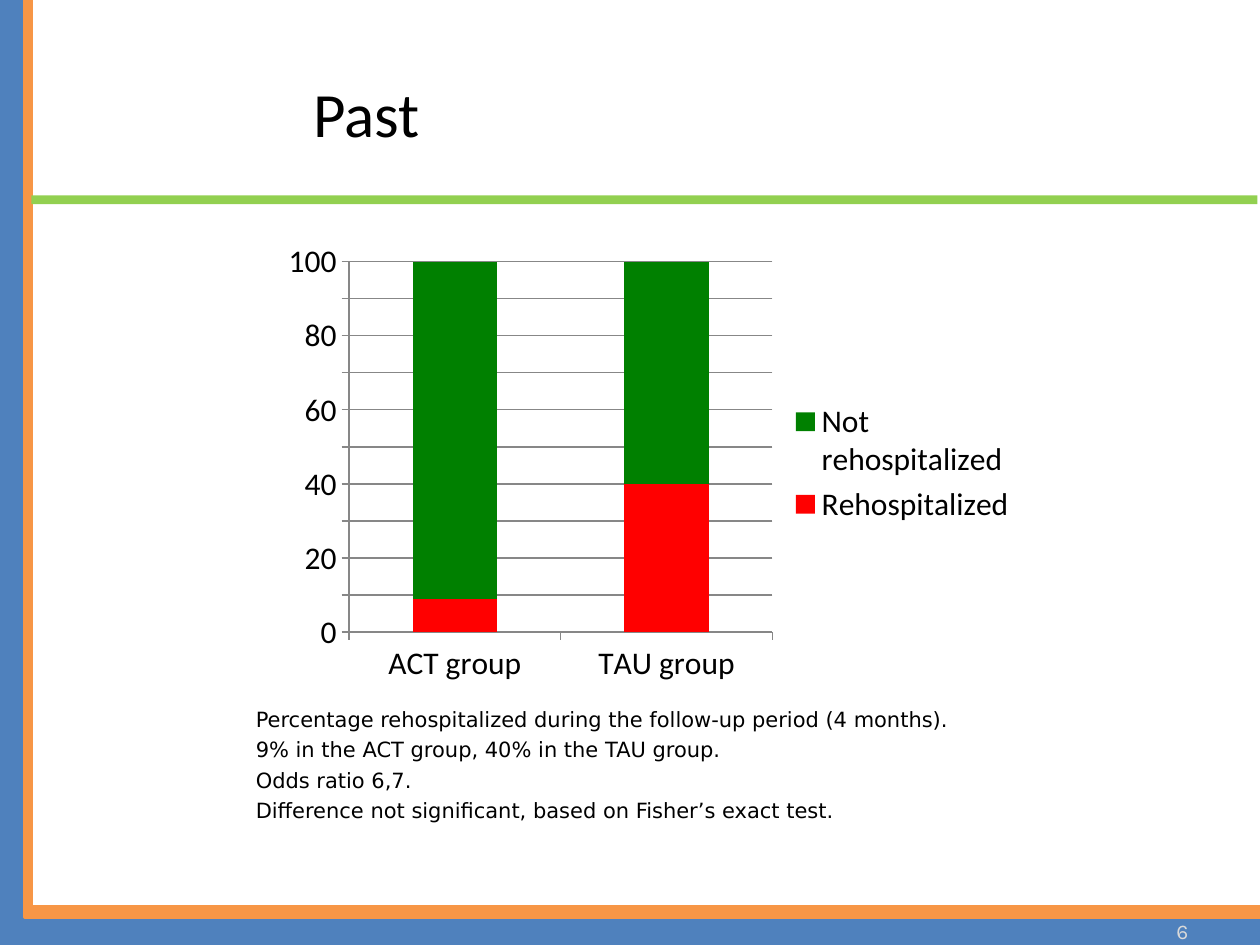
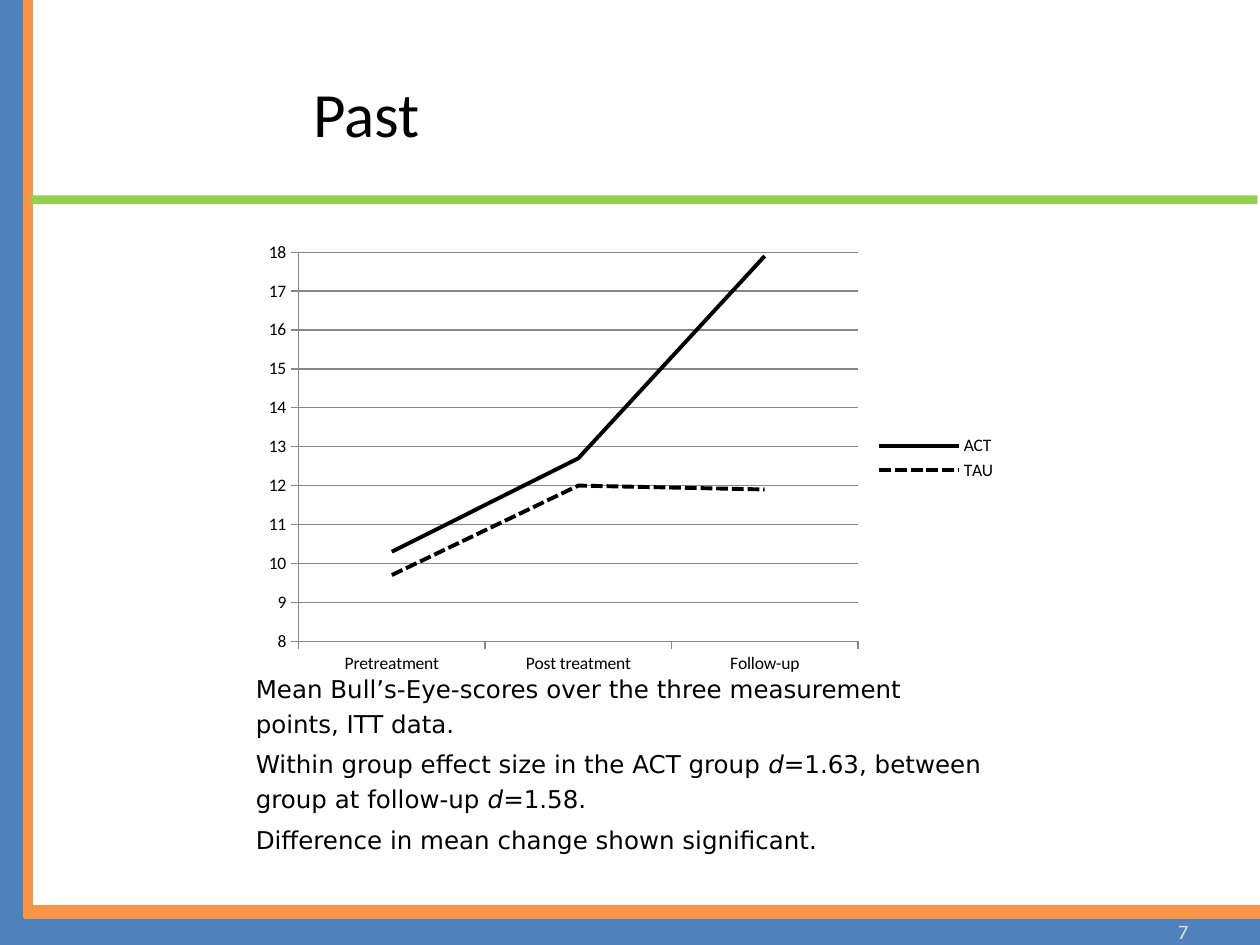
"""Build two slides that report trial results with a chart and a short comment each."""

from dataclasses import dataclass
from typing import Any, NamedTuple, Optional

from lxml import etree
from pptx import Presentation
from pptx.chart.chart import Chart
from pptx.chart.data import CategoryChartData
from pptx.dml.color import RGBColor
from pptx.enum.chart import XL_CHART_TYPE, XL_LEGEND_POSITION, XL_TICK_MARK
from pptx.enum.dml import MSO_LINE
from pptx.enum.shapes import MSO_SHAPE
from pptx.enum.text import MSO_ANCHOR, MSO_AUTO_SIZE, PP_ALIGN
from pptx.oxml.ns import qn
from pptx.slide import Slide
from pptx.util import Inches, Pt

RECT = MSO_SHAPE.RECTANGLE
STACKED, LINE = XL_CHART_TYPE.COLUMN_STACKED, XL_CHART_TYPE.LINE
LEGEND_RIGHT = XL_LEGEND_POSITION.RIGHT
TICK_OUT = XL_TICK_MARK.OUTSIDE
DASH = MSO_LINE.SQUARE_DOT
TOP, MIDDLE = MSO_ANCHOR.TOP, MSO_ANCHOR.MIDDLE
LEFT, CENTER, RIGHT = PP_ALIGN.LEFT, PP_ALIGN.CENTER, PP_ALIGN.RIGHT
NO_FIT = MSO_AUTO_SIZE.NONE


@dataclass(frozen=True)
class Theme:
    """Colours, fonts and type sizes shared by the slides."""

    blue: str = "4F81BD"
    orange: str = "F79646"
    lime: str = "92D050"
    text: str = "000000"
    number: str = "D9D9D9"
    grid: str = "878787"
    bad: str = "FF0000"
    good: str = "008000"
    font: str = "Calibri"
    comment_font: str = "DejaVu Sans"
    number_font: str = "Karla"
    title_size: float = 36
    number_size: float = 12
    comment_gap: float = 2.8
    band_line: float = 2
    grid_line: float = 0.75
    series_line: float = 2.25


THEME = Theme()


class Box(NamedTuple):
    """Left, top, width and height in inches."""

    left: float
    top: float
    width: float
    height: float


class Band(NamedTuple):
    """A coloured strip of the slide frame."""

    box: Box
    color: str
    outlined: bool = False


class Series(NamedTuple):
    """A named row of chart values."""

    name: str
    values: tuple[float, ...]
    color: str
    dash: Optional[MSO_LINE] = None


class Run(NamedTuple):
    """A piece of text in one style."""

    text: str
    italic: bool = False


@dataclass(frozen=True)
class ChartSpec:
    """Type, place, scale and data of a chart."""

    kind: XL_CHART_TYPE
    box: Box
    plot: Box
    size: float
    scale: dict[str, float]
    categories: tuple[str, ...]
    series: tuple[Series, ...]


@dataclass(frozen=True)
class ResultSlide:
    """Everything that differs between the result slides."""

    number: int
    chart: ChartSpec
    comment_top: float
    comment_size: float
    line_spacing: float
    comment: tuple[tuple[Run, ...], ...]


BANDS = (
    Band(Box(0, 0, 0.2, 7.5), THEME.blue),
    Band(Box(0.2, 7.28, 9.8, 0.22), THEME.blue),
    Band(Box(0.2, 0, 0.05, 7.28), THEME.orange, True),
    Band(Box(0.25, 7.2, 9.75, 0.08), THEME.orange, True),
    Band(Box(0.25, 1.55, 9.73, 0.07), THEME.lime),
)
TITLE_BOX = Box(0.66, 0.62, 4.5, 0.54)
NUMBER_BOX = Box(7.2, 7.28, 2.33, 0.22)

SLIDES = (
    ResultSlide(
        number=6,
        chart=ChartSpec(
            STACKED, Box(2.17, 1.86, 6, 3.63), Box(0.1, 0.06, 0.56, 0.81), 18,
            {"minimum_scale": 0, "maximum_scale": 100, "major_unit": 10},
            ("ACT group", "TAU group"),
            (
                Series("Rehospitalized", (9, 40), THEME.bad),
                Series("Not rehospitalized", (91, 60), THEME.good),
            ),
        ),
        comment_top=5.56,
        comment_size=12,
        line_spacing=1.0,
        comment=(
            (Run("Percentage rehospitalized during the follow-up period (4 months)."),),
            (Run("9% in the ACT group, 40% in the TAU group."),),
            (Run("Odds ratio 6,7."),),
            (Run("Difference not significant, based on Fisher’s exact test."),),
        ),
    ),
    ResultSlide(
        number=7,
        chart=ChartSpec(
            LINE, Box(2.01, 1.86, 6, 3.55), Box(0.06, 0.04, 0.74, 0.87), 10,
            {"minimum_scale": 8, "maximum_scale": 18, "major_unit": 1},
            ("Pretreatment", "Post treatment", "Follow-up"),
            (
                Series("ACT", (10.3, 12.7, 17.9), THEME.text),
                Series("TAU", (9.7, 12, 11.9), THEME.text, DASH),
            ),
        ),
        comment_top=5.25,
        comment_size=14,
        line_spacing=1.2,
        comment=(
            (Run("Mean Bull’s-Eye-scores over the three measurement points, ITT data."),),
            (
                Run("Within group effect size in the ACT group "), Run("d", True),
                Run("=1.63, between group at follow-up "), Run("d", True), Run("=1.58."),
            ),
            (Run("Difference in mean change shown significant."),),
        ),
    ),
)


def rgb(color: str) -> RGBColor:
    """Turn a hex string into a colour."""
    return RGBColor.from_string(color)


def apply(target: Any, values: dict[str, Any]) -> None:
    """Set each named attribute on the target."""
    for name, value in values.items():
        setattr(target, name, value)


def place(sp: Any, box: Box) -> None:
    """Move and size a shape."""
    apply(sp, {name: Inches(v) for name, v in box._asdict().items()})


def style_font(font: Any, name: str, size: float, color: str, italic: bool = False) -> None:
    """Format a font."""
    apply(font, {"name": name, "size": Pt(size), "italic": italic})
    font.color.rgb = rgb(color)


def style_frame(tf: Any, anchor: MSO_ANCHOR) -> None:
    """Make a text frame wrap at a fixed size."""
    apply(tf, {"word_wrap": True, "auto_size": NO_FIT, "vertical_anchor": anchor})


def add_band(s: Slide, band: Band) -> None:
    """Draw one strip of the frame."""
    sp = s.shapes.add_shape(RECT, *map(Inches, band.box))
    sp.shadow.inherit = False
    sp.fill.solid()
    sp.fill.fore_color.rgb = rgb(band.color)
    if band.outlined:
        sp.line.color.rgb = rgb(band.color)
        sp.line.width = Pt(THEME.band_line)
    else:
        sp.line.fill.background()


def add_line_text(sp: Any, text: str, align: PP_ALIGN, font: str, size: float, color: str) -> None:
    """Write one vertically centred line into a shape."""
    tf = sp.text_frame
    style_frame(tf, MIDDLE)
    p = tf.paragraphs[0]
    p.alignment = align
    r = p.add_run()
    r.text = text
    style_font(r.font, font, size, color)


def write_comment(sp: Any, spec: ResultSlide) -> None:
    """Fill the body placeholder with unbulleted paragraphs."""
    tf = sp.text_frame
    style_frame(tf, TOP)
    for i, runs in enumerate(spec.comment):
        p = tf.add_paragraph() if i else tf.paragraphs[0]
        ppr = p._p.get_or_add_pPr()
        apply_indent = {"marL": "0", "indent": "0"}
        for name, value in apply_indent.items():
            ppr.set(name, value)
        etree.SubElement(ppr, qn("a:buNone"))
        apply(p, {
            "alignment": LEFT,
            "line_spacing": spec.line_spacing,
            "space_before": Pt(THEME.comment_gap if i else 0),
        })
        for run in runs:
            r = p.add_run()
            r.text = run.text
            style_font(r.font, THEME.comment_font, spec.comment_size, THEME.text, run.italic)


def fix_plot(chart: Chart, plot: Box) -> None:
    """Pin the inner plot area to fractions of the chart."""
    area = chart.element.find(".//" + qn("c:plotArea"))
    for old in area.findall(qn("c:layout")):
        area.remove(old)
    layout = etree.Element(qn("c:layout"))
    manual = etree.SubElement(layout, qn("c:manualLayout"))
    values = {"layoutTarget": "inner", "xMode": "edge", "yMode": "edge"}
    values |= dict(zip("xywh", map(str, plot)))
    for tag, value in values.items():
        etree.SubElement(manual, qn("c:" + tag)).set("val", value)
    area.insert(0, layout)


def add_chart(s: Slide, spec: ChartSpec) -> None:
    """Draw a stacked column or line chart."""
    data = CategoryChartData()
    data.categories = spec.categories
    for row in spec.series:
        data.add_series(row.name, row.values)
    chart = s.shapes.add_chart(spec.kind, *map(Inches, spec.box), data).chart
    apply(chart, {"has_title": False, "has_legend": True})
    apply(chart.legend, {"position": LEGEND_RIGHT, "include_in_layout": False})
    style_font(chart.font, THEME.font, spec.size, THEME.text)
    fix_plot(chart, spec.plot)

    axis = chart.value_axis
    apply(axis, {"has_major_gridlines": True, **spec.scale})
    for ax in (axis, chart.category_axis):
        ax.major_tick_mark = TICK_OUT
    for part in (axis, chart.category_axis, axis.major_gridlines):
        part.format.line.color.rgb = rgb(THEME.grid)
        part.format.line.width = Pt(THEME.grid_line)

    plot = chart.plots[0]
    plot.vary_by_categories = False
    if spec.kind == STACKED:
        apply(plot, {"gap_width": 150, "overlap": 100})
    for ser, row in zip(plot.series, spec.series):
        if spec.kind == STACKED:
            ser.format.fill.solid()
            ser.format.fill.fore_color.rgb = rgb(row.color)
        else:
            ser.smooth = False
            ser.format.line.color.rgb = rgb(row.color)
            apply(ser.format.line, {"width": Pt(THEME.series_line), "dash_style": row.dash})


def add_result_slide(prs: Any, spec: ResultSlide) -> None:
    """Add one framed slide with title, number, chart and comment."""
    s = prs.slides.add_slide(prs.slide_layouts[1])
    for band in BANDS:
        add_band(s, band)
    title, body = s.placeholders
    place(title, TITLE_BOX)
    add_line_text(title, "Past", CENTER, THEME.font, THEME.title_size, THEME.text)
    number = s.shapes.add_textbox(*map(Inches, NUMBER_BOX))
    add_line_text(number, str(spec.number), RIGHT, THEME.number_font, THEME.number_size, THEME.number)
    add_chart(s, spec.chart)
    place(body, Box(1.93, spec.comment_top, 6, 1.65))
    write_comment(body, spec)


def main() -> None:
    """Build and save the presentation."""
    prs = Presentation()
    apply(prs, {"slide_width": Inches(10), "slide_height": Inches(7.5)})
    for spec in SLIDES:
        add_result_slide(prs, spec)
    prs.save("out.pptx")


if __name__ == "__main__":
    main()
